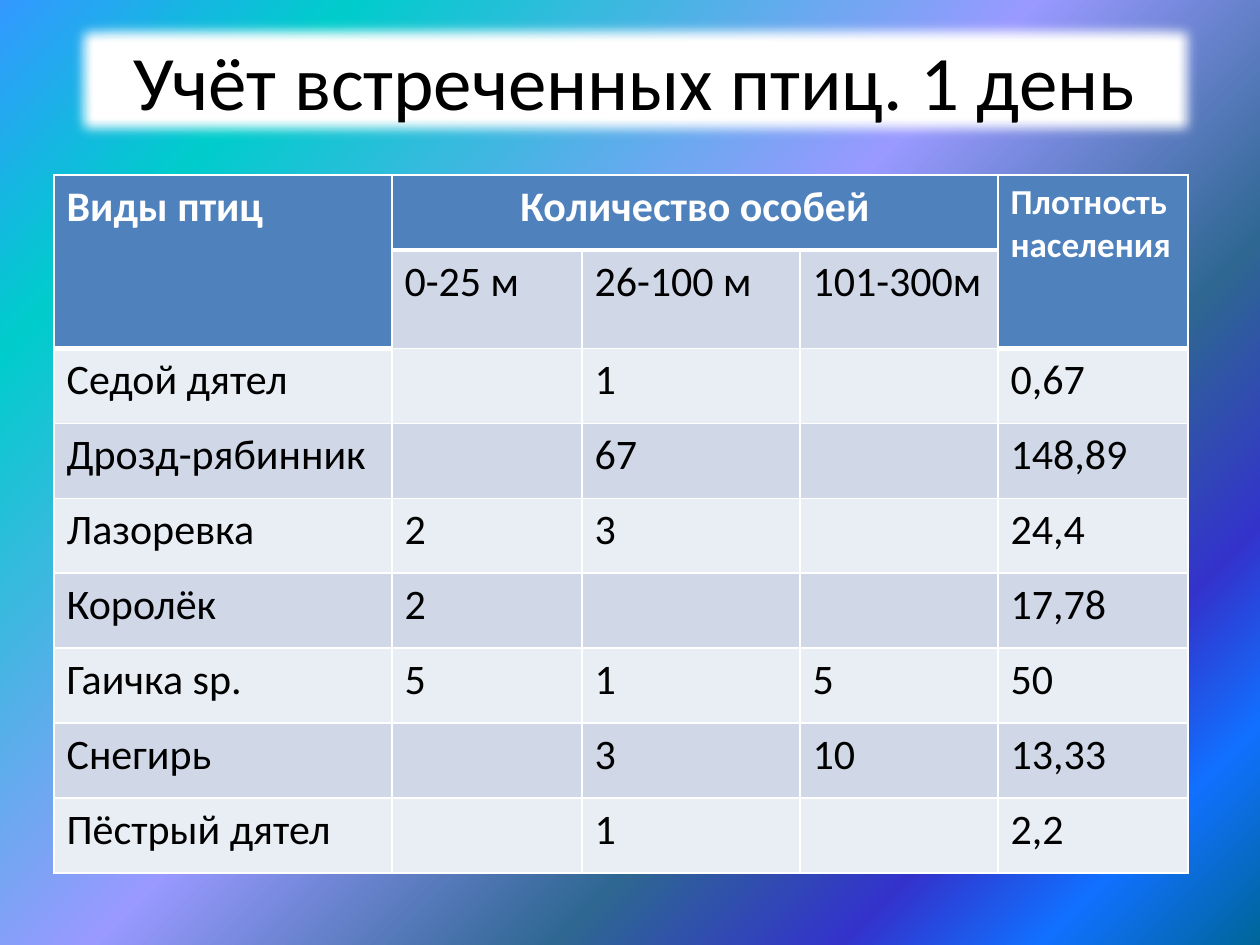
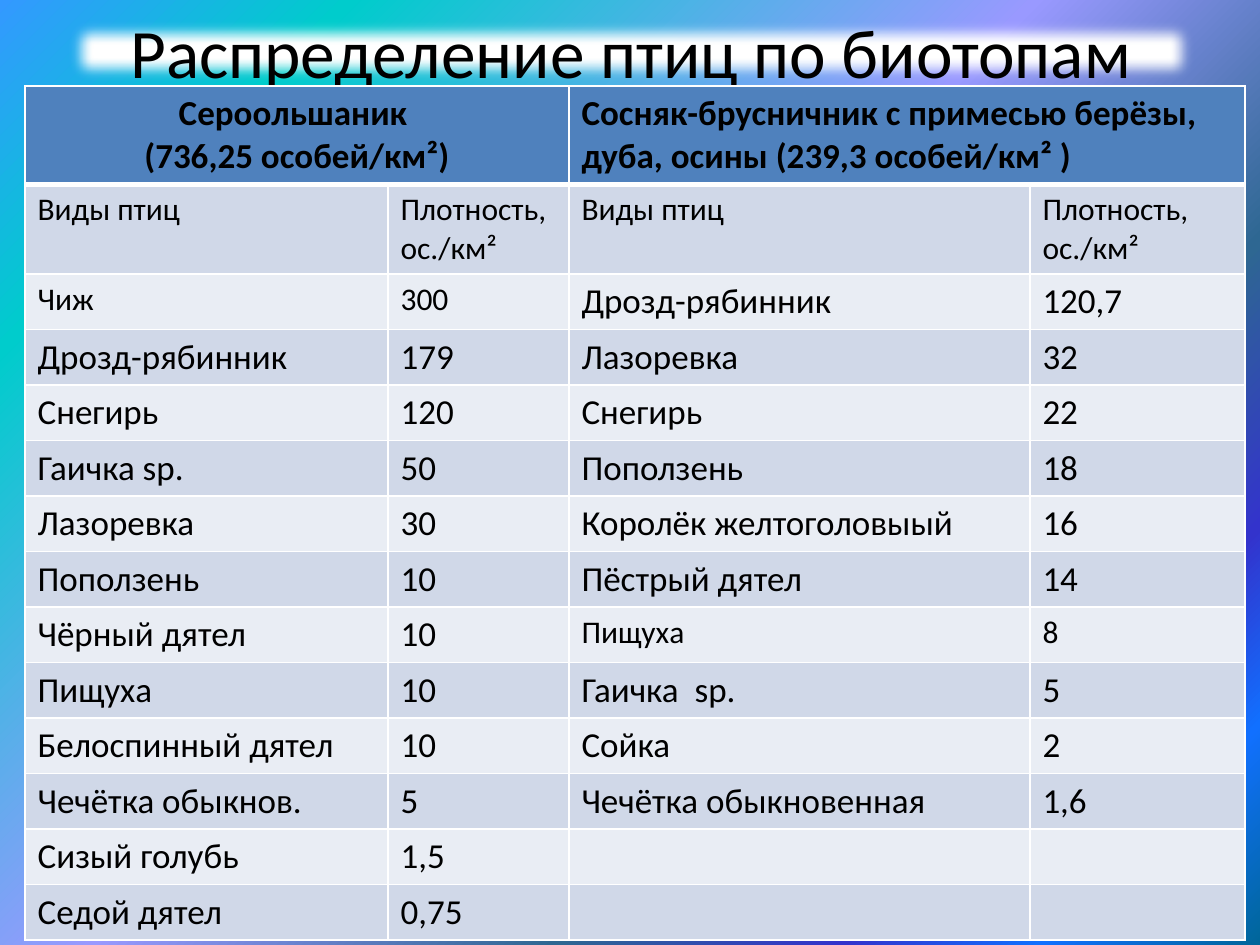
from dataclasses import dataclass, field

from lxml import etree
from pptx import Presentation
from pptx.dml.color import RGBColor
from pptx.enum.shapes import MSO_SHAPE
from pptx.enum.text import MSO_ANCHOR, PP_ALIGN
from pptx.oxml.ns import qn
from pptx.slide import Slide
from pptx.table import _Cell
from pptx.util import Emu, Pt

RECT = MSO_SHAPE.RECTANGLE
MIDDLE = MSO_ANCHOR.MIDDLE
LEFT, CENTER = PP_ALIGN.LEFT, PP_ALIGN.CENTER
SCALE = 914400 / 126  # EMU in one px


@dataclass(frozen=True)
class Theme:
    font: str = "Calibri"
    black: str = "000000"
    white: str = "FFFFFF"
    blue: str = "4F81BD"
    bands: tuple[str, str] = ("E9EDF4", "D0D8E8")
    sky: tuple[tuple[int, str], ...] = (
        (0, "3399FF"), (16, "00CCCC"), (47, "9999FF"), (68, "2E6792"),
        (81, "3333CC"), (90, "1170FF"), (100, "006699"))
    thin: int = 1
    thick: int = 3
    frame: int = 2
    blur: int = 15
    title: float = 44
    tight: float = 39.6
    large: int = 24
    mid: int = 20
    small: int = 18


THEME = Theme()
Spot = tuple[int, int]


@dataclass(frozen=True)
class Title:
    text: str
    box: tuple[int, int, int, int]
    size: float


@dataclass(frozen=True)
class Grid:
    spot: Spot
    cols: list[int]
    heights: list[int]
    rows: list[list[str]]
    merges: list[tuple[Spot, Spot]]
    ink: str  # text colour of the head
    size: int
    sizes: dict[Spot, int] = field(default_factory=dict)
    centred: tuple[Spot, ...] = ()


def px(length: int) -> Emu:
    return Emu(round(length * SCALE))


def rgb(code: str) -> RGBColor:
    return RGBColor.from_string(code)


def add_color(parent: etree._Element, code: str) -> None:
    etree.SubElement(parent, qn("a:srgbClr"), val=code)


# Background shared by all slides
def paint_sky(slide: Slide) -> None:
    fill = slide.background.fill
    fill.gradient()
    fill.gradient_angle = 315
    stops = slide.element.find(".//" + qn("a:gsLst"))
    for stop in list(stops):
        stops.remove(stop)
    for place, code in THEME.sky:
        stop = etree.SubElement(stops, qn("a:gs"), pos=str(place * 1000))
        add_color(stop, code)


# White title band with soft edges
def draw_title(slide: Slide, title: Title) -> None:
    band = slide.shapes.add_shape(RECT, *map(px, title.box))
    band.fill.solid()
    band.fill.fore_color.rgb = rgb(THEME.white)
    band.line.color.rgb = rgb(THEME.blue)
    band.line.width = Pt(THEME.frame)
    band.shadow.inherit = False
    effects = band.element.spPr.find(qn("a:effectLst"))
    etree.SubElement(effects, qn("a:softEdge"), rad=str(px(THEME.blur)))
    frame = band.text_frame
    frame.word_wrap = True
    frame.vertical_anchor = MIDDLE
    frame.text = title.text
    style_text(frame, title.size, THEME.black, False, CENTER)


def style_text(frame, size: float, ink: str, bold: bool, align) -> None:
    for para in frame.paragraphs:
        para.alignment = align
        for run in para.runs:
            run.font.name = THEME.font
            run.font.size = Pt(size)
            run.font.bold = bold
            run.font.color.rgb = rgb(ink)


# Table cells
def draw_edges(cell: _Cell, top: int, bottom: int) -> None:
    props = cell._tc.get_or_add_tcPr()
    widths = {"L": THEME.thin, "R": THEME.thin, "T": top, "B": bottom}
    for side, width in widths.items():
        line = etree.SubElement(props, qn("a:ln" + side), w=str(Pt(width)))
        add_color(etree.SubElement(line, qn("a:solidFill")), THEME.white)


def draw_grid(slide: Slide, grid: Grid) -> None:
    x, y = grid.spot
    table = slide.shapes.add_table(
        len(grid.rows), len(grid.cols), px(x), px(y),
        px(sum(grid.cols)), px(sum(grid.heights))).table
    for col, width in zip(table.columns, grid.cols):
        col.width = px(width)
    for row, height in zip(table.rows, grid.heights):
        row.height = px(height)

    # The head is the first row and all that its merged cells cover
    head = {(0, c) for c in range(len(grid.cols))}
    for (top, left), (end, right) in grid.merges:
        table.cell(top, left).merge(table.cell(end, right))
        head |= {(r, c) for r in range(top, end + 1)
                 for c in range(left, right + 1)}

    for r, texts in enumerate(grid.rows):
        for c, text in enumerate(texts):
            spot = (r, c)
            cell = table.cell(r, c)
            first = spot in head
            above, below = (r - 1, c) in head, (r + 1, c) in head
            draw_edges(cell,
                       THEME.thick if above and not first else THEME.thin,
                       THEME.thick if first and not below else THEME.thin)
            cell.fill.solid()
            cell.fill.fore_color.rgb = rgb(
                THEME.blue if first else THEME.bands[r % 2])
            if text:
                cell.text_frame.text = text
                style_text(cell.text_frame, grid.sizes.get(spot, grid.size),
                           grid.ink if first else THEME.black, first,
                           CENTER if spot in grid.centred else LEFT)


# Bird count of day one
COUNT = Grid(
    spot=(54, 175),
    cols=[338, 190, 218, 198, 190],
    heights=[75, 98] + [75] * 7,
    rows=[
        ["Виды птиц", "Количество особей", "", "", "Плотность населения"],
        ["", "0-25 м", "26-100 м", "101-300м", ""],
        ["Седой дятел", "", "1", "", "0,67"],
        ["Дрозд-рябинник", "", "67", "", "148,89"],
        ["Лазоревка", "2", "3", "", "24,4"],
        ["Королёк", "2", "", "", "17,78"],
        ["Гаичка sp.", "5", "1", "5", "50"],
        ["Снегирь", "", "3", "10", "13,33"],
        ["Пёстрый дятел", "", "1", "", "2,2"],
    ],
    merges=[((0, 0), (1, 0)), ((0, 1), (0, 3)), ((0, 4), (1, 4))],
    ink=THEME.white,
    size=THEME.large,
    sizes={(0, 4): THEME.mid},
    centred=((0, 1),),
)

# Birds by habitat
SMALL = [(1, c) for c in range(4)] + [(2, 0), (2, 1), (8, 2), (8, 3)]
HOMES = Grid(
    spot=(25, 86),
    cols=[363, 181, 461, 215],
    heights=[98, 89] + [55] * 12,
    rows=[
        ["Сероольшаник \n(736,25 особей/км²)", "",
         "Сосняк-брусничник с примесью берёзы, дуба, осины "
         "(239,3 особей/км² )", ""],
        ["Виды птиц", "Плотность, ос./км²"] * 2,
        ["Чиж", "300", "Дрозд-рябинник", "120,7"],
        ["Дрозд-рябинник", "179", "Лазоревка", "32"],
        ["Снегирь", "120", "Снегирь", "22"],
        ["Гаичка sp.", "50", "Поползень", "18"],
        ["Лазоревка", "30", "Королёк желтоголовыый", "16"],
        ["Поползень", "10", "Пёстрый дятел", "14"],
        ["Чёрный дятел", "10", "Пищуха", "8"],
        ["Пищуха", "10", "Гаичка  sp.", "5"],
        ["Белоспинный дятел", "10", "Сойка", "2"],
        ["Чечётка обыкнов.", "5", "Чечётка обыкновенная", "1,6"],
        ["Сизый голубь", "1,5", "", ""],
        ["Седой дятел", "0,75", "", ""],
    ],
    merges=[((0, 0), (0, 1)), ((0, 2), (0, 3))],
    ink=THEME.black,
    size=THEME.mid,
    sizes=dict.fromkeys(SMALL, THEME.small),
    centred=((0, 0),),
)

PAGES = [
    (Title("Учёт встреченных птиц. 1 день",
           (68, 16, 1134, 127), THEME.title), COUNT),
    (Title("Распределение птиц по биотопам",
           (64, 16, 1134, 69), THEME.tight), HOMES),
]


def main() -> None:
    deck = Presentation()
    deck.slide_width, deck.slide_height = px(1260), px(945)
    blank = deck.slide_layouts[6]
    for title, grid in PAGES:
        slide = deck.slides.add_slide(blank)
        paint_sky(slide)
        draw_title(slide, title)
        draw_grid(slide, grid)
    deck.save("out.pptx")


if __name__ == "__main__":
    main()
